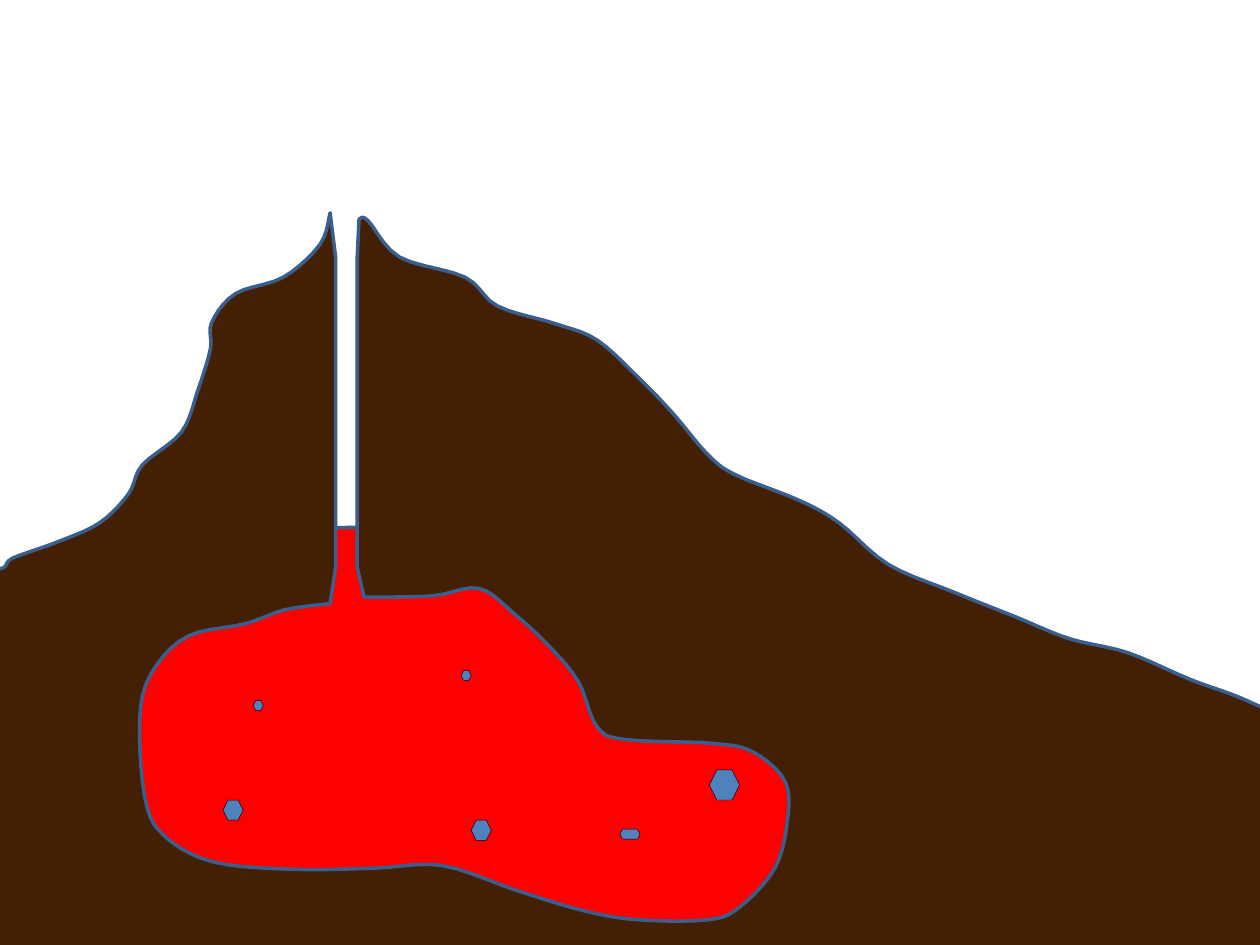
from dataclasses import dataclass
from itertools import chain

from pptx import Presentation
from pptx.dml.color import RGBColor
from pptx.enum.shapes import MSO_SHAPE
from pptx.util import Cm, Pt

HEXAGON = MSO_SHAPE.HEXAGON
GRID = Cm(2.54) / 100
CURVE_STEPS = 5


@dataclass(frozen=True)
class Theme:
    magma: RGBColor = RGBColor(0xFF, 0x00, 0x00)
    rock: RGBColor = RGBColor(0x43, 0x20, 0x03)
    outline: RGBColor = RGBColor(0x3A, 0x5F, 0x8C)
    crystal: RGBColor = RGBColor(0x4F, 0x81, 0xBD)
    crystal_edge: RGBColor = RGBColor(0x00, 0x00, 0x00)
    outline_width: Pt = Pt(2)
    crystal_width: Pt = Pt(0.25)


THEME = Theme()

LEFT_PEAK, RIGHT_PEAK = (262, 169), (285, 174)
VENT_LEFT, VENT_RIGHT = 266.5, 283.5
VENT_TOP, VENT_FOOT = 205, 450
LEFT_MOUTH, RIGHT_MOUTH = (262, 479), (289, 474)
SLIDE_EDGE_RIGHT = (1007, 564)
BURIED_CORNER_LEFT = (-54, 454)

LEFT_SLOPE = [
    BURIED_CORNER_LEFT, (-2, 452), (10, 443), (46, 430), (79, 415), (102, 392),
    (113, 369), (144, 343), (157, 310), (167, 277), (168, 256), (187, 233),
    (225, 220), (254, 194), LEFT_PEAK,
]
RIGHT_SLOPE = [
    RIGHT_PEAK, (292, 175), (317, 204), (369, 220), (395, 243), (441, 257),
    (474, 270), (508, 301), (534, 328), (562, 361), (584, 377), (634, 397),
    (666, 415), (705, 448), (757, 470), (807, 490), (849, 507), (895, 518),
    (944, 539), (980, 552), SLIDE_EDGE_RIGHT,
]
VENT_LEFT_WALL = [
    LEFT_PEAK, (VENT_LEFT, VENT_TOP), (VENT_LEFT, VENT_FOOT), LEFT_MOUTH,
]
VENT_RIGHT_WALL = [
    RIGHT_MOUTH, (VENT_RIGHT, VENT_FOOT), (VENT_RIGHT, VENT_TOP), RIGHT_PEAK,
]
CHAMBER_WALL = [
    LEFT_MOUTH, (226, 484), (195, 495), (149, 505), (121, 533), (111, 569),
    (115, 633), (130, 663), (169, 684), (234, 690), (298, 689), (351, 687),
    (411, 707), (464, 723), (507, 730), (562, 730), (587, 720), (615, 689),
    (625, 651), (623, 620), (598, 597), (566, 590), (497, 587), (474, 577),
    (459, 541), (436, 513), (408, 487), (380, 467), (343, 473), RIGHT_MOUTH,
]
BEDROCK = [
    SLIDE_EDGE_RIGHT, (1013, 659), (1054, 770), (1011, 790), (680, 833),
    (20, 789), (-33, 707), (-84, 552), (-69, 457), BURIED_CORNER_LEFT,
]
MAGMA_SURFACE = [(230, 420), (298, 418)]
MAGMA_RIGHT_BANK = [
    MAGMA_SURFACE[1], (343, 433), (402, 457), (461, 500), (505, 534),
    (567, 559), (634, 585), (653, 620), (643, 672), (605, 723), (569, 756),
]
MAGMA_FLOOR = [(569, 756), (352, 757)]
MAGMA_LEFT_BANK = [
    MAGMA_FLOOR[1], (284, 749), (213, 726), (138, 685), (97, 638), (93, 592),
    (107, 505), (139, 457), (190, 433), MAGMA_SURFACE[0],
]

CRYSTAL_UNIT = 8
CRYSTALS = [
    (374, 651, 2, 2), (201, 556, 1, 1), (177, 635, 2, 2),
    (366, 532, 1, 1), (492, 658, 2, 1), (563, 611, 3, 3),
]


def smooth(knots):
    """Return points on a Catmull-Rom curve that passes through every knot."""
    padded = [knots[0], *knots, knots[-1]]
    points = [knots[0]]
    for before, start, end, after in zip(padded, padded[1:], padded[2:], padded[3:]):
        for step in range(1, CURVE_STEPS + 1):
            t = step / CURVE_STEPS
            points.append(tuple(
                s + t / 2 * (e - b + t * (2 * b - 5 * s + 4 * e - a
                                          + t * (3 * (s - e) + a - b)))
                for b, s, e, a in zip(before, start, end, after)))
    return points


def paint(shape, fill, edge, width):
    shape.shadow.inherit = False
    shape.fill.solid()
    shape.fill.fore_color.rgb = fill
    shape.line.color.rgb = edge
    shape.line.width = width


def add_body(slide, left, top, sections, fill):
    points = [(round(x * GRID), round(y * GRID))
              for x, y in chain.from_iterable(sections)]
    builder = slide.shapes.build_freeform(*points[0])
    builder.add_line_segments(points[1:], close=True)
    body = builder.convert_to_shape(left, top)
    paint(body, fill, THEME.outline, THEME.outline_width)


def add_magma(slide, left, top):
    sections = [MAGMA_SURFACE, smooth(MAGMA_RIGHT_BANK),
                MAGMA_FLOOR, smooth(MAGMA_LEFT_BANK)]
    add_body(slide, left, top, sections, THEME.magma)


def add_mountain(slide, left, top):
    sections = [smooth(LEFT_SLOPE), VENT_LEFT_WALL, smooth(CHAMBER_WALL),
                VENT_RIGHT_WALL, smooth(RIGHT_SLOPE), BEDROCK]
    add_body(slide, left, top, sections, THEME.rock)


def add_crystals(slide, left, top):
    for x, y, columns, rows in CRYSTALS:
        crystal = slide.shapes.add_shape(
            HEXAGON, left + round(x * GRID), top + round(y * GRID),
            round(columns * CRYSTAL_UNIT * GRID), round(rows * CRYSTAL_UNIT * GRID))
        paint(crystal, THEME.crystal, THEME.crystal_edge, THEME.crystal_width)


def main():
    deck = Presentation()
    deck.slide_width, deck.slide_height = Cm(25.4), Cm(19.05)
    volcano_slide = deck.slides.add_slide(deck.slide_layouts[6])
    for add_part in (add_magma, add_mountain, add_crystals):
        add_part(volcano_slide, Cm(0), Cm(0))
    deck.save("out.pptx")


if __name__ == "__main__":
    main()
